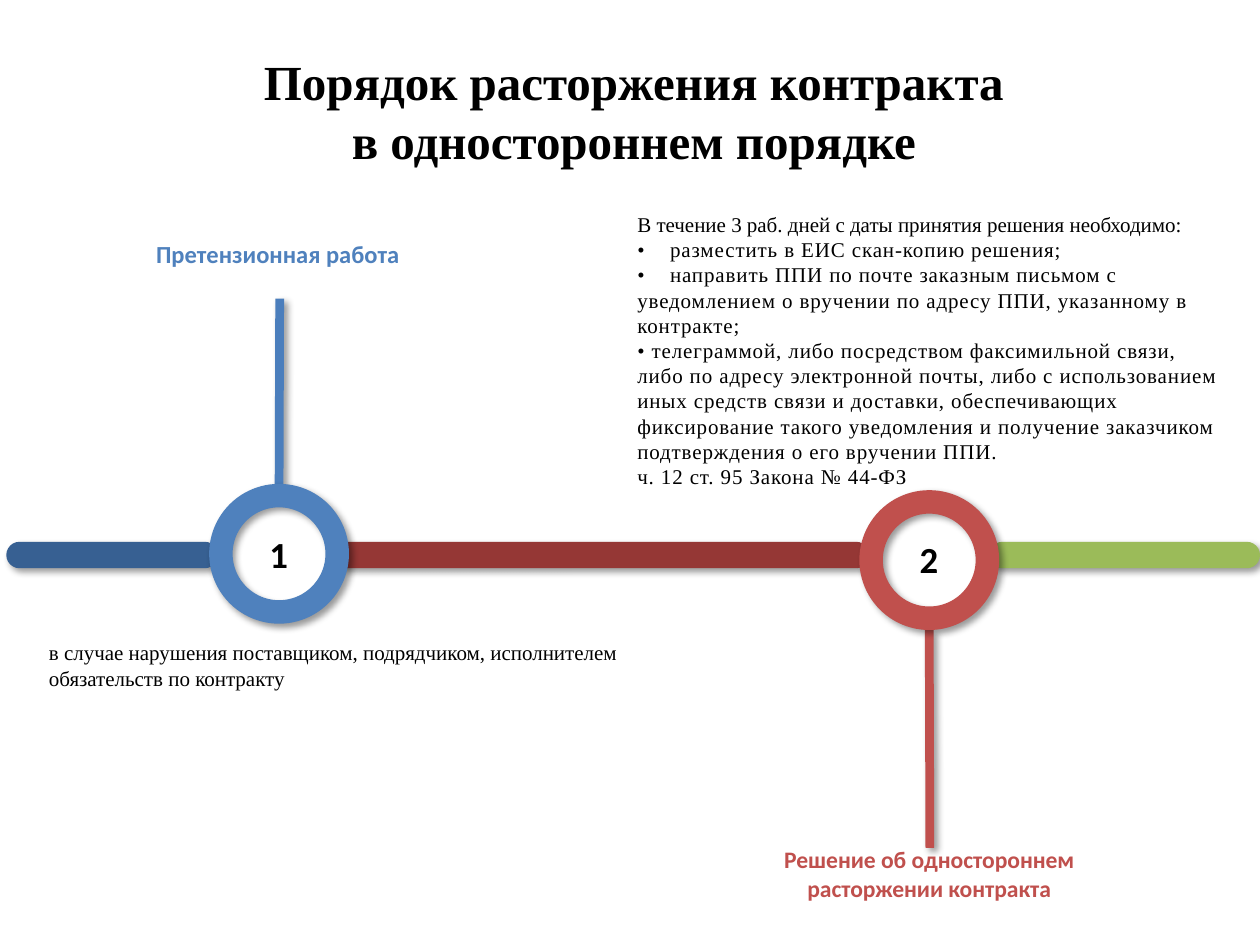
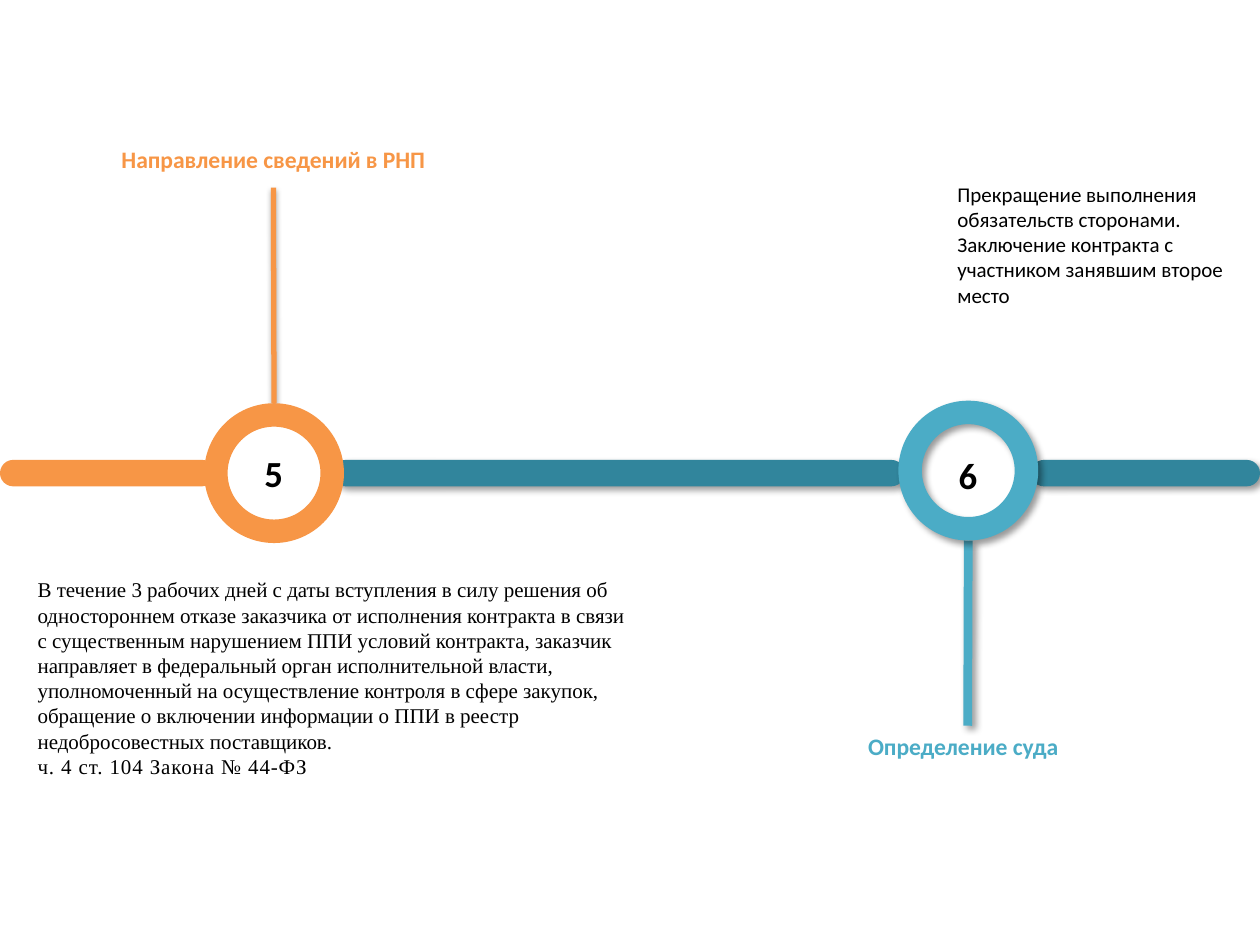
from lxml import etree
from pptx import Presentation
from pptx.dml.color import RGBColor
from pptx.enum.shapes import MSO_CONNECTOR, MSO_SHAPE
from pptx.enum.text import MSO_ANCHOR, MSO_AUTO_SIZE, PP_ALIGN
from pptx.oxml.ns import qn
from pptx.util import Inches, Pt

LINE = MSO_CONNECTOR.STRAIGHT
BAR, DONUT = MSO_SHAPE.ROUNDED_RECTANGLE, MSO_SHAPE.DONUT
MID, GROW = MSO_ANCHOR.MIDDLE, MSO_AUTO_SIZE.SHAPE_TO_FIT_TEXT
LEFT, CENTER = PP_ALIGN.LEFT, PP_ALIGN.CENTER

# Shared look
COLORS = {
    "black": "000000", "blue": "4F81BD", "stem": "4B7EBC", "navy": "376092",
    "red": "C0504D", "wine": "953735", "green": "9BBB59",
    "orange": "F79646", "aqua": "4BACC6", "teal": "31859C",
}
SANS, SERIF = "Calibri", "Times New Roman"
RING, BAND, THICK = 1.11, 0.21, 0.168
NUM_W, NUM_H = 0.35, 0.45
TAB = 0.26
# Shadows: opacity %, blur pt, distance pt, angle
DEEP, SOFT = (40, 4, 3, 45), (35, 3.1, 1.8, 90)

# Content: bars are (left, width, colour, shadow); body lines are (text, spacing)
SLIDES = [
    {
        "title": ["Порядок расторжения контракта", "в одностороннем порядке"],
        "axis": 4.3,
        "bars": [(0.05, 1.68, "navy", DEEP), (2.66, 4.24, "wine", DEEP),
                 (7.85, 2.15, "green", DEEP)],
        "steps": [
            {"num": "1", "at": (1.66, 3.84), "num_top": 4.17, "color": "blue",
             "shade": DEEP, "tip": (2.22, 2.37), "stem": ("stem", 5, DEEP),
             "label": ["Претензионная работа"], "size": 14,
             "box": (1.13, 1.85, 2.15, 0.34)},
            {"num": "2", "at": (6.82, 3.89), "num_top": 4.21, "color": "red",
             "shade": DEEP, "tip": (7.38, 6.73), "stem": ("red", 5, DEEP),
             "label": ["Решение об одностороннем", "расторжении контракта"],
             "size": 13.5, "box": (6.11, 6.66, 2.53, 0.56)},
        ],
        "bodies": [
            (SERIF, (0.29, 5.03, 4.84, 0.5), [
                ("в случае нарушения поставщиком, подрядчиком, исполнителем "
                 "обязательств по контракту", 0)]),
            (SERIF, (4.96, 1.63, 4.84, 2.32), [
                ("В течение 3 раб. дней с даты принятия решения необходимо:", 0),
                ("•\tразместить в ЕИС скан-копию решения;", 0.5),
                ("•\tнаправить ППИ по почте заказным письмом с уведомлением "
                 "о вручении по адресу ППИ, указанному в контракте;", 0.5),
                ("• телеграммой, либо посредством факсимильной связи, либо по "
                 "адресу электронной почты, либо с использованием иных средств "
                 "связи и доставки, обеспечивающих фиксирование такого "
                 "уведомления и получение заказчиком подтверждения о его "
                 "вручении ППИ.", 0.5),
                ("ч. 12 ст. 95 Закона № 44-ФЗ", 0.5)]),
        ],
    },
    {
        "title": [],
        "axis": 3.65,
        "bars": [(8.18, 1.82, "teal", DEEP), (2.64, 4.54, "teal", DEEP),
                 (0, 1.71, "orange", None)],
        "steps": [
            {"num": "5", "at": (1.62, 3.2), "num_top": 3.53, "color": "orange",
             "shade": None, "tip": (2.17, 1.49), "stem": ("orange", 3, SOFT),
             "label": ["Направление сведений в РНП"], "size": 13.5,
             "box": (0.85, 1.1, 2.64, 0.33)},
            {"num": "6", "at": (7.13, 3.18), "num_top": 3.54, "color": "aqua",
             "shade": DEEP, "tip": (7.68, 5.76), "stem": ("aqua", 5, DEEP),
             "label": ["Определение суда"], "size": 13.5,
             "box": (6.78, 5.76, 1.73, 0.33)},
        ],
        "bodies": [
            (SANS, (7.5, 1.39, 2.4, 1.11), [
                ("Прекращение выполнения обязательств сторонами.", 0),
                ("Заключение контракта с участником занявшим второе место", 0)]),
            (SERIF, (0.2, 4.53, 4.9, 1.72), [
                ("В течение 3 рабочих дней с даты вступления в силу решения об "
                 "одностороннем отказе заказчика от исполнения контракта в "
                 "связи с существенным нарушением ППИ условий контракта, "
                 "заказчик направляет в федеральный орган исполнительной "
                 "власти, уполномоченный на осуществление контроля в сфере "
                 "закупок, обращение о включении информации о ППИ в реестр "
                 "недобросовестных поставщиков.", 0),
                ("ч. 4 ст. 104 Закона № 44-ФЗ", 0.5)]),
        ],
    },
]


def rgb(name):
    return RGBColor.from_string(COLORS[name])


def add_shade(shape, shade):
    """Set the outer shadow, or none at all."""
    effects = etree.SubElement(shape._element.spPr, qn("a:effectLst"))
    if shade:
        alpha, blur, dist, angle = shade
        outer = etree.SubElement(
            effects, qn("a:outerShdw"), blurRad=str(Pt(blur)),
            dist=str(Pt(dist)), dir=str(angle * 60000), rotWithShape="0")
        color = etree.SubElement(outer, qn("a:srgbClr"), val=COLORS["black"])
        etree.SubElement(color, qn("a:alpha"), val=str(alpha * 1000))


def add_form(slide, kind, box, adjust, color, shade):
    shape = slide.shapes.add_shape(kind, *map(Inches, box))
    shape.adjustments[0] = adjust
    shape.fill.solid()
    shape.fill.fore_color.rgb = rgb(color)
    shape.line.fill.background()
    add_shade(shape, shade)
    return shape


def add_stem(slide, start, tip, color, width, shade):
    stem = slide.shapes.add_connector(LINE, *map(Inches, start + tip))
    stem.line.color.rgb = rgb(color)
    stem.line.width = Pt(width)
    add_shade(stem, shade)
    return stem


def add_text(slide, box, lines, font, size, color="black", bold=False,
             align=LEFT, wrap=False):
    frame = slide.shapes.add_textbox(*map(Inches, box)).text_frame
    frame.word_wrap = wrap
    frame.auto_size = GROW
    frame.text = "\n".join(text for text, _ in lines)
    for para, (text, gap) in zip(frame.paragraphs, lines):
        para.alignment = align
        if "\t" in text:
            tabs = etree.SubElement(para._p.get_or_add_pPr(), qn("a:tabLst"))
            etree.SubElement(tabs, qn("a:tab"), pos=str(Inches(TAB)), algn="l")
        for run in para.runs:
            run.font.name, run.font.size = font, Pt(size)
            run.font.bold = bold
            run.font.color.rgb = rgb(color)
            if gap:
                run._r.get_or_add_rPr().set("spc", str(int(gap * 100)))
    return frame


def plain(lines):
    return [(text, 0) for text in lines]


def build(slide, data):
    # Stems run from the ring's top or bottom to the tip
    stems = []
    for step in data["steps"]:
        left, top = step["at"]
        up = step["tip"][1] < top
        start = (left + RING / 2, top if up else top + RING)
        stems.append((add_stem(slide, start, step["tip"], *step["stem"]), up))

    # Time line
    for left, width, color, shade in data["bars"]:
        add_form(slide, BAR, (left, data["axis"], width, BAND), 0.5, color, shade)

    # Numbered rings with labels
    for step, (stem, up) in zip(data["steps"], stems):
        left, top = step["at"]
        ring = add_form(slide, DONUT, (left, top, RING, RING), THICK,
                        step["color"], step["shade"])
        if up:
            stem.begin_connect(ring, 0)
        num_left = left + (RING - NUM_W) / 2
        add_text(slide, (num_left, step["num_top"], NUM_W, NUM_H),
                 plain(step["num"]), SANS, 21, bold=True)
        add_text(slide, step["box"], plain(step["label"]), SANS, step["size"],
                 step["color"], bold=True, align=CENTER)

    # Title and body text
    if data["title"]:
        frame = add_text(slide, (1.8, 0.36, 6.46, 1.04), plain(data["title"]),
                         SERIF, 28, bold=True, align=CENTER, wrap=True)
        frame.vertical_anchor = MID
    for font, box, lines in data["bodies"]:
        add_text(slide, box, lines, font, 12, wrap=True)


def main():
    deck = Presentation()
    deck.slide_width, deck.slide_height = Inches(10), Inches(7.5)
    for data in SLIDES:
        build(deck.slides.add_slide(deck.slide_layouts[6]), data)
    deck.save("out.pptx")


if __name__ == "__main__":
    main()
